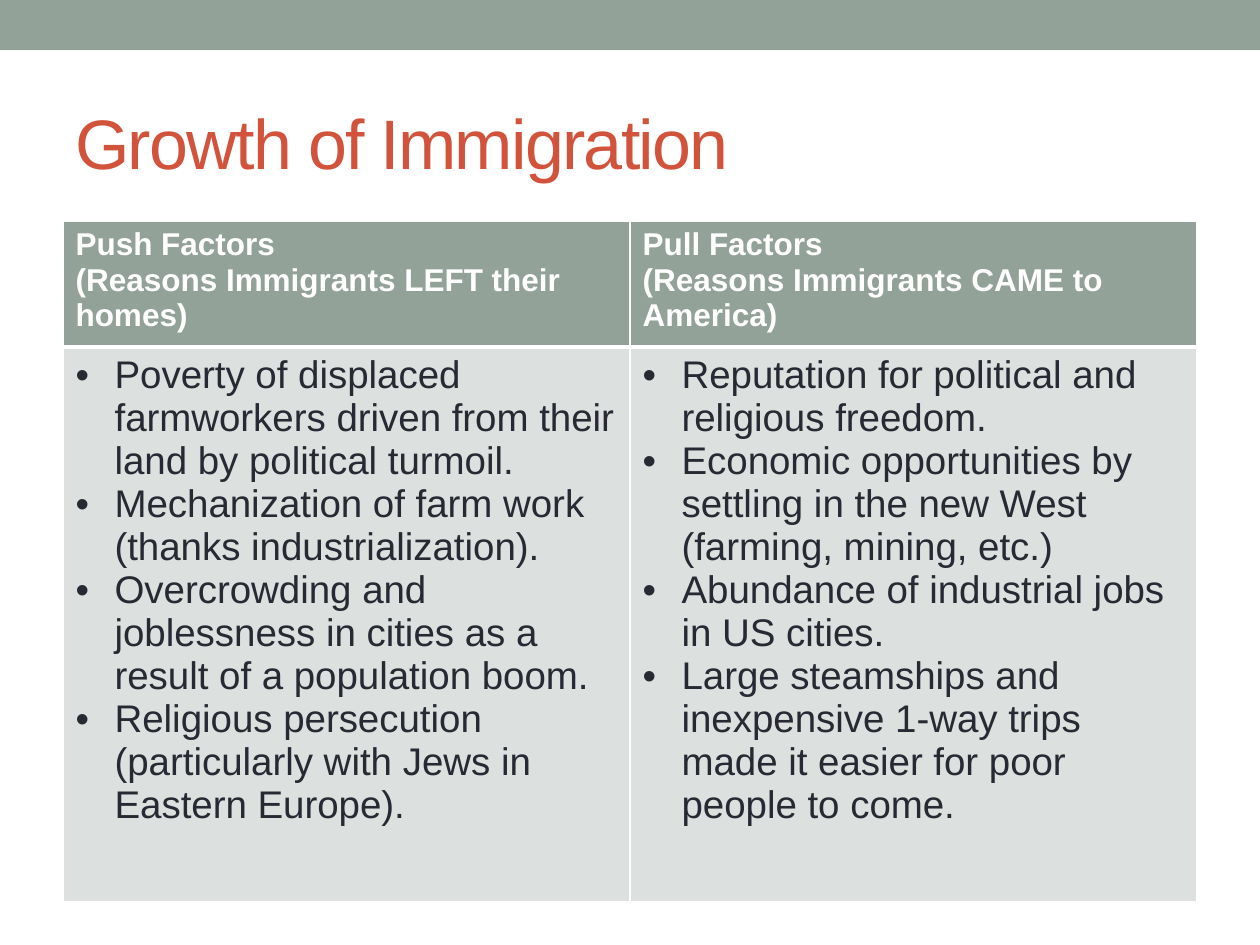
from dataclasses import dataclass

from lxml.etree import SubElement
from pptx import Presentation
from pptx.dml.color import RGBColor
from pptx.enum.shapes import MSO_SHAPE as Shape
from pptx.enum.text import MSO_ANCHOR as Anchor
from pptx.oxml.ns import qn
from pptx.util import Emu, Pt

PX_PER_INCH = 126
SAGE, RUST, INK, MIST, WHITE = "93A299", "D2533C", "292934", "DCE0DE", "FFFFFF"
FONT = "Arial"
BULLET_INDENT = 39
HEADER_HEIGHT, BODY_HEIGHT = 118, 555
COLUMN_WIDTH = 567


@dataclass(frozen=True)
class Factors:
    heading: list[str]
    reasons: list[str]


FACTORS = [
    Factors(
        ["Push Factors", "(Reasons Immigrants LEFT their homes)"],
        [
            "Poverty of displaced farmworkers driven from their land by political turmoil.",
            "Mechanization of farm work (thanks industrialization).",
            "Overcrowding and joblessness in cities as a result of a population boom.",
            "Religious persecution (particularly with Jews in Eastern Europe).",
        ],
    ),
    Factors(
        ["Pull Factors", "(Reasons Immigrants CAME to America)"],
        [
            "Reputation for political and religious freedom.",
            "Economic opportunities by settling in the new West (farming, mining, etc.)",
            "Abundance of industrial jobs in US cities.",
            "Large steamships and inexpensive 1-way trips made it easier for poor people to come.",
        ],
    ),
]


def px(length: int) -> Emu:
    return Emu(round(length * 914400 / PX_PER_INCH))


def color(value: str) -> RGBColor:
    return RGBColor.from_string(value)


def write(frame, lines: list[str], *, size: int, ink: str, bold: bool = False,
          bulleted: bool = False, tracking: int = 0) -> None:
    frame.word_wrap = True
    for index, line in enumerate(lines):
        paragraph = frame.paragraphs[0] if index == 0 else frame.add_paragraph()
        if bulleted:
            properties = paragraph._p.get_or_add_pPr()
            properties.set("marL", str(px(BULLET_INDENT)))
            properties.set("indent", str(-px(BULLET_INDENT)))
            SubElement(properties, qn("a:buFont"), typeface=FONT)
            SubElement(properties, qn("a:buChar"), char="•")
        run = paragraph.add_run()
        run.text = line
        run.font.name = FONT
        run.font.size = Pt(size)
        run.font.bold = bold
        run.font.color.rgb = color(ink)
        if tracking:
            run.font._element.set("spc", str(tracking * 100))


def style_cell(cell, fill: str, top: int, bottom: int) -> None:
    properties = cell._tc.get_or_add_tcPr()
    for side, width in {"L": 1, "R": 1, "T": top, "B": bottom}.items():
        border = SubElement(properties, qn(f"a:ln{side}"), w=str(Pt(width)))
        solid = SubElement(border, qn("a:solidFill"))
        SubElement(solid, qn("a:srgbClr"), val=WHITE)
    cell.fill.solid()
    cell.fill.fore_color.rgb = color(fill)


def add_band(slide) -> None:
    band = slide.shapes.add_shape(Shape.RECTANGLE, 0, 0, px(1260), px(50))
    band.shadow.inherit = False
    band.fill.solid()
    band.fill.fore_color.rgb = color(SAGE)
    band.line.fill.background()


def add_title(slide, title: str) -> None:
    frame = slide.shapes.add_textbox(px(63), px(73), px(1134), px(136)).text_frame
    frame.vertical_anchor = Anchor.MIDDLE
    write(frame, [title], size=40, ink=RUST, tracking=-1)


def add_factor_table(slide, factors: list[Factors]) -> None:
    table = slide.shapes.add_table(
        2, len(factors), px(63), px(221),
        px(COLUMN_WIDTH * len(factors)), px(HEADER_HEIGHT + BODY_HEIGHT),
    ).table
    table.horz_banding = False
    table.rows[0].height = px(HEADER_HEIGHT)
    table.rows[1].height = px(BODY_HEIGHT)
    for index, factor in enumerate(factors):
        table.columns[index].width = px(COLUMN_WIDTH)
        header, body = table.cell(0, index), table.cell(1, index)
        style_cell(header, SAGE, top=1, bottom=3)
        style_cell(body, MIST, top=3, bottom=1)
        write(header.text_frame, factor.heading, size=18, ink=WHITE, bold=True)
        write(body.text_frame, factor.reasons, size=22, ink=INK, bulleted=True)


def main() -> None:
    deck = Presentation()
    deck.slide_width, deck.slide_height = px(1260), px(945)
    slide = deck.slides.add_slide(deck.slide_layouts[6])
    add_band(slide)
    add_title(slide, "Growth of Immigration")
    add_factor_table(slide, FACTORS)
    deck.save("out.pptx")


if __name__ == "__main__":
    main()
